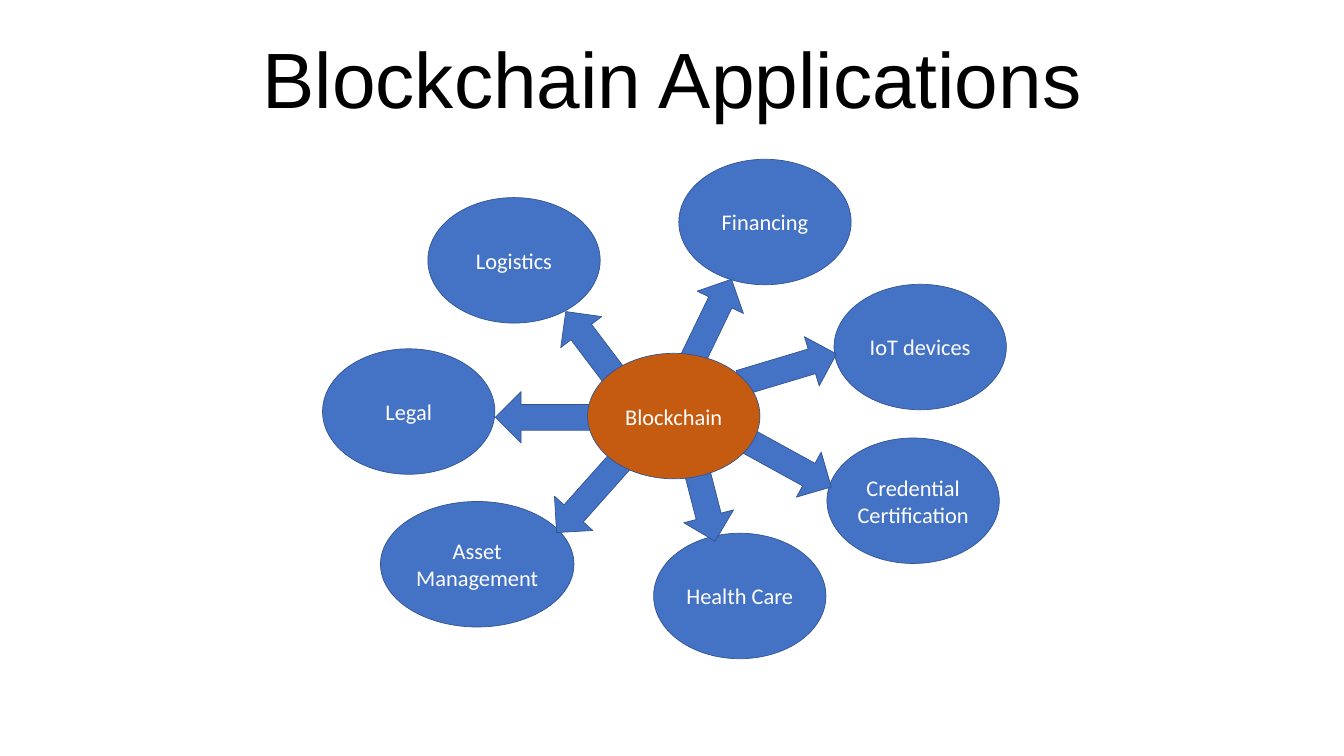
from pptx import Presentation
from pptx.dml.color import RGBColor
from pptx.enum.shapes import MSO_SHAPE
from pptx.enum.text import MSO_ANCHOR, PP_ALIGN
from pptx.util import Inches, Pt

OVAL, ARROW = MSO_SHAPE.OVAL, MSO_SHAPE.LEFT_ARROW
MIDDLE, CENTER = MSO_ANCHOR.MIDDLE, PP_ALIGN.CENTER
BLUE = RGBColor(0x44, 0x72, 0xC4)
EDGE = RGBColor(0x32, 0x54, 0x91)
RUST = RGBColor(0xC5, 0x5A, 0x11)
WHITE = RGBColor(0xFF, 0xFF, 0xFF)
BLACK = RGBColor(0, 0, 0)

TITLE = "Blockchain Applications"
WIDE, TALL = 3.42, 2.49
LONG, THICK = 2, 1.02
HUB = ("Blockchain", 11.66, 7.01, WIDE)
USES = [
    ("Financing", 13.47, 3.16, WIDE),
    ("IoT devices", 16.55, 5.64, WIDE),
    ("Credential Certification", 16.41, 8.69, WIDE),
    ("Asset Management", 7.55, 9.95, 3.84),
    ("Logistics", 8.49, 3.92, WIDE),
    ("Legal", 6.4, 6.92, WIDE),
    ("Health Care", 12.97, 10.58, WIDE),
]
BACK = (10.83, 6.47, 52.9)
FRONT = [
    (13.08, 5.93, 115.8),
    (14.64, 6.8, 163.3),
    (14.62, 8.67, 208.8),
    (12.94, 9.26, 255.5),
    (10.71, 9.31, 311.7),
    (9.83, 7.77, 0),
]


def write(frame, text, font, size, color):
    frame.text = text
    frame.word_wrap = True
    frame.vertical_anchor = MIDDLE
    para = frame.paragraphs[0]
    para.alignment = CENTER
    run = para.runs[0].font
    run.name, run.size = font, Pt(size)
    run.color.rgb = color
    return para


def add_form(kind, left, top, width, height, fill=BLUE):
    form = slide.shapes.add_shape(kind, *map(Inches, (left, top, width, height)))
    form.shadow.inherit = False
    form.fill.solid()
    form.fill.fore_color.rgb = fill
    form.line.color.rgb = EDGE
    form.line.width = Pt(1)
    return form


def add_oval(label, left, top, width, fill=BLUE):
    oval = add_form(OVAL, left, top, width, TALL, fill)
    write(oval.text_frame, label, "Calibri", 32, WHITE)


def add_arrow(left, top, turn):
    add_form(ARROW, left, top, LONG, THICK).rotation = turn


deck = Presentation()
deck.slide_width, deck.slide_height = Inches(26.67), Inches(15)
slide = deck.slides.add_slide(deck.slide_layouts[5])

add_arrow(*BACK)
for use in USES:
    add_oval(*use)
for arrow in FRONT:
    add_arrow(*arrow)
add_oval(*HUB, RUST)

title = slide.shapes.title
title.left, title.top = Inches(1.85), Inches(0.39)
title.width, title.height = Inches(22.97), Inches(2.5)
write(title.text_frame, TITLE, "Arial", 112, BLACK).line_spacing = 0.9

deck.save("out.pptx")
